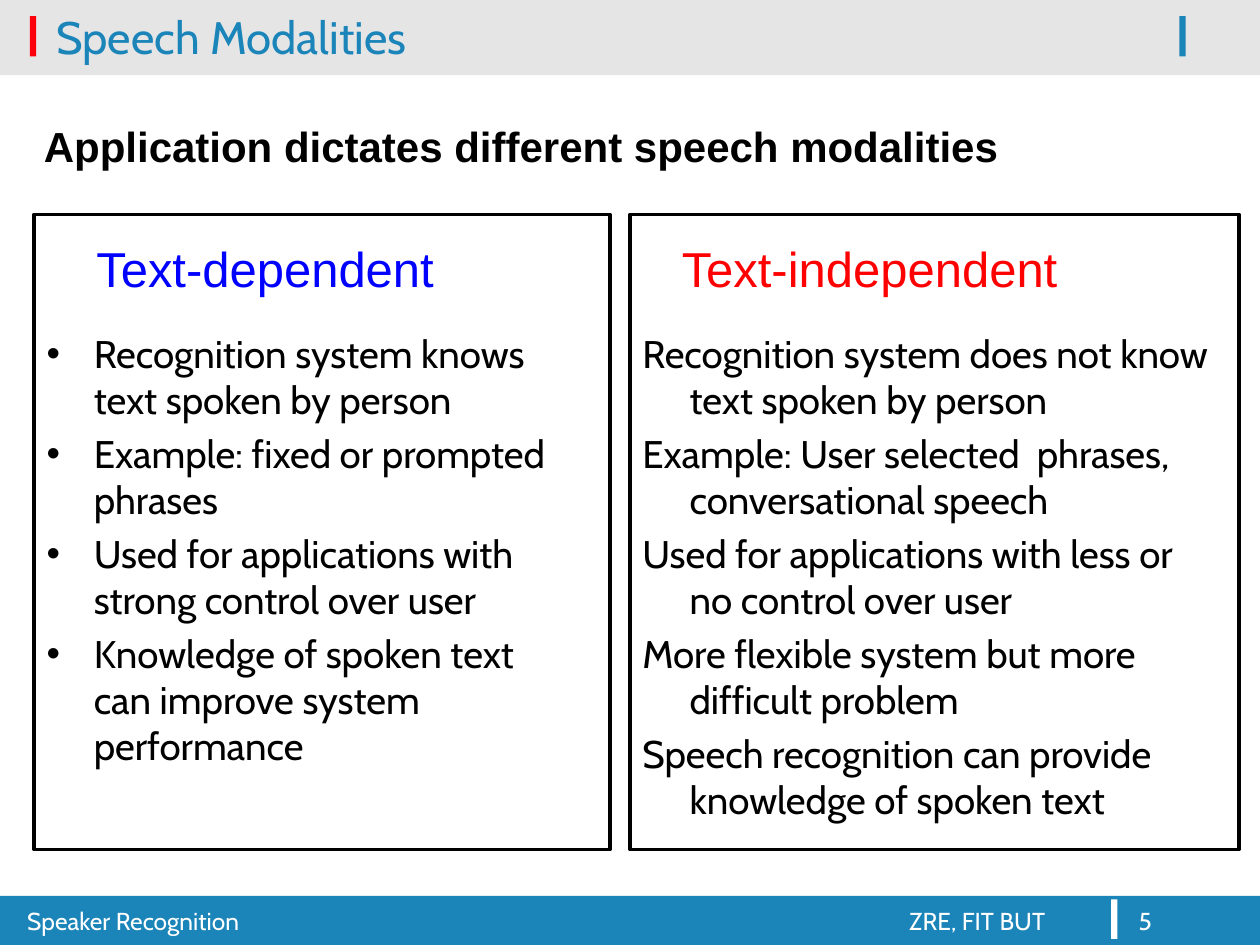
import pptx
import pptx.dml.color
import pptx.enum.shapes
import pptx.enum.text
import pptx.oxml.ns
import pptx.util
from lxml import etree

Pt = pptx.util.Pt
BLUE, WHITE, BLACK, GREY = "1B85B9", "FFFFFF", "000000", "E5E5E5"
HANGING = 27

KNOWN_TEXT = [
    "Recognition system knows text spoken by person",
    "Example: fixed or prompted phrases",
    "Used for applications with strong control over user",
    "Knowledge of spoken text can improve system performance",
]
UNKNOWN_TEXT = [
    "Recognition system does not know text spoken by person",
    "Example: User selected  phrases, conversational speech",
    "Used for applications with less or no control over user",
    "More flexible system but more difficult problem",
    "Speech recognition can provide knowledge of spoken text",
]


def color(value):
    return pptx.dml.color.RGBColor.from_string(value)


def add_rectangle(slide, left, top, width, height, fill, line=None):
    shape = slide.shapes.add_shape(
        pptx.enum.shapes.MSO_SHAPE.RECTANGLE, Pt(left), Pt(top), Pt(width), Pt(height))
    shape.shadow.inherit = False
    shape.fill.solid()
    shape.fill.fore_color.rgb = color(fill)
    if line:
        shape.line.color.rgb = color(line)
        shape.line.width = Pt(2)
    else:
        shape.line.fill.background()


def add_property(paragraph, tag, **attributes):
    properties = paragraph._p.get_or_add_pPr()
    return etree.SubElement(properties, pptx.oxml.ns.qn(tag), attributes)


def write_text(shape, texts, *, size, font="Cabin", fill=BLACK, bold=False,
               hanging=0, bullet=False, gap=0, tab=None):
    """Fill a shape with one formatted paragraph per text."""
    frame = shape.text_frame
    frame.word_wrap = True
    for index, text in enumerate(texts):
        paragraph = frame.paragraphs[0] if index == 0 else frame.add_paragraph()
        paragraph.alignment = pptx.enum.text.PP_ALIGN.LEFT
        if hanging:
            properties = paragraph._p.get_or_add_pPr()
            properties.set("marL", str(Pt(hanging)))
            properties.set("indent", str(-Pt(hanging)))
        if bullet:
            add_property(paragraph, "a:buFont", typeface="Arial")
            add_property(paragraph, "a:buChar", char="•")
        if tab:
            tabs = add_property(paragraph, "a:tabLst")
            etree.SubElement(tabs, pptx.oxml.ns.qn("a:tab"), pos=str(Pt(tab)), algn="l")
        if index:
            paragraph.space_before = Pt(gap)
        run = paragraph.add_run()
        run.text = text
        run.font.size = Pt(size)
        run.font.name = font
        run.font.bold = bold
        run.font.color.rgb = color(fill)


def add_text(slide, left, top, width, height, texts, **text_format):
    box = slide.shapes.add_textbox(Pt(left), Pt(top), Pt(width), Pt(height))
    write_text(box, texts, **text_format)


def add_title(slide, text):
    title = slide.shapes.title
    title.left, title.top, title.width, title.height = Pt(25), Pt(-8), Pt(641), Pt(57)
    title.text_frame.vertical_anchor = pptx.enum.text.MSO_ANCHOR.MIDDLE
    write_text(title, [text], size=26, fill=BLUE)
    # Bring the title in front of the header band
    slide.shapes._spTree.append(title._element)


def add_modality(slide, left, width, heading_left, heading, fill, items, text_width, bullet):
    add_rectangle(slide, left, 122.5, width, 363, WHITE, line=BLACK)
    add_text(slide, left, 185, text_width, 300, items,
             size=22, hanging=HANGING, bullet=bullet, gap=4.4)
    add_text(slide, heading_left, 132.5, 250, 41, [heading],
             size=28, font="Arial", fill=fill, hanging=HANGING)


def main():
    presentation = pptx.Presentation()
    presentation.slide_width, presentation.slide_height = Pt(720), Pt(540)
    slide = presentation.slides.add_slide(presentation.slide_layouts[5])

    # Header and footer bands with their accent bars
    add_rectangle(slide, 0, 40, 720, 3, GREY)
    add_rectangle(slide, 0, 512, 720, 28, BLUE)
    add_rectangle(slide, 0, 0, 720, 40, GREY)
    add_rectangle(slide, 17, 9.2, 3.6, 23, "FE000C")
    add_rectangle(slide, 674, 9.2, 3.6, 23, BLUE)
    add_rectangle(slide, 635, 514, 3.6, 22.5, WHITE)
    add_text(slide, 8.5, 514, 618, 26, ["Speaker Recognition\tZRE, FIT BUT"],
             size=14, fill=WHITE, tab=504)
    add_text(slide, 643.5, 514, 65, 26, ["5"], size=14, fill=WHITE)

    # Title and statement
    add_title(slide, "Speech Modalities")
    add_text(slide, 18, 65.5, 684, 36, ["Application dictates different speech modalities"],
             size=24, font="Arial", bold=True)

    # The two modalities side by side
    add_modality(slide, 360, 348, 382.5, "Text-independent", "FF0000",
                 UNKNOWN_TEXT, 346, False)
    add_modality(slide, 19.5, 329, 48, "Text-dependent", "0000FF",
                 KNOWN_TEXT, 306, True)

    presentation.save("out.pptx")


if __name__ == "__main__":
    main()
